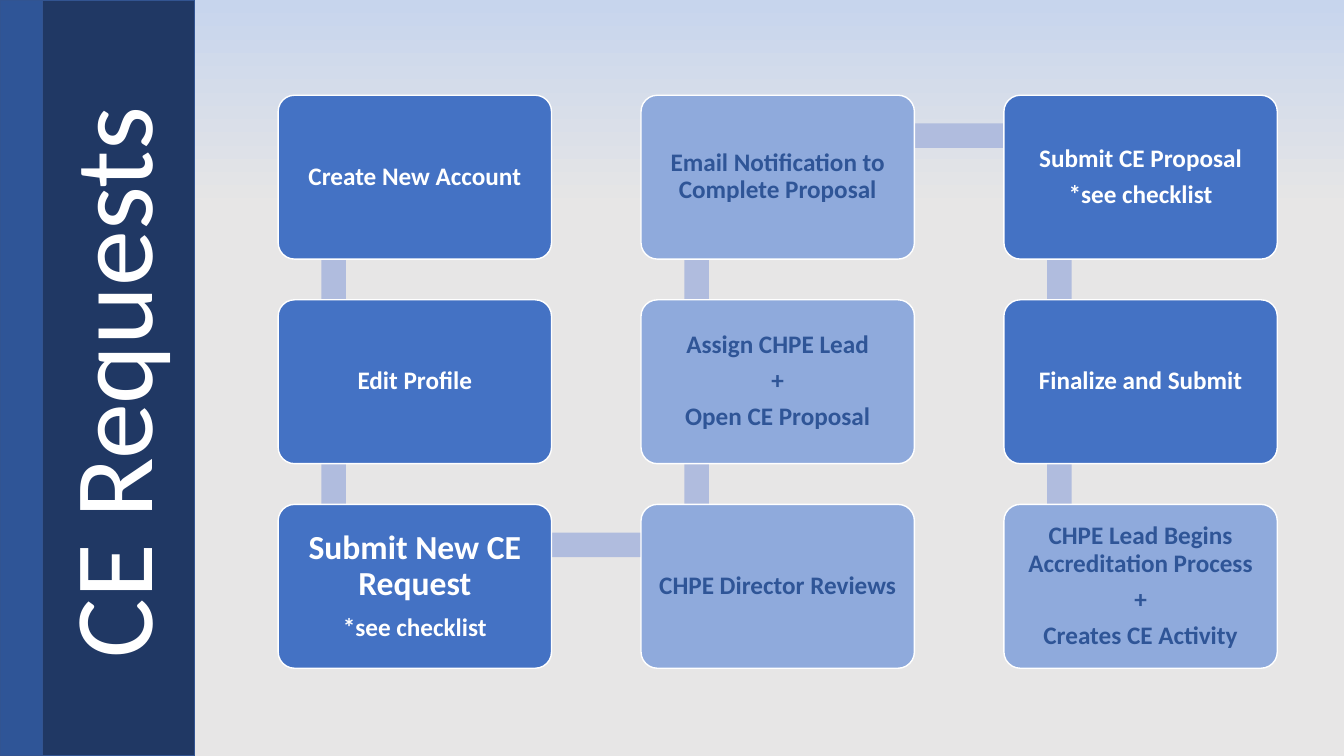
from dataclasses import dataclass

from pptx import Presentation
from pptx.dml.color import RGBColor
from pptx.enum.shapes import MSO_SHAPE
from pptx.enum.text import MSO_ANCHOR, MSO_AUTO_SIZE, PP_ALIGN
from pptx.util import Cm, Pt

RECT = MSO_SHAPE.RECTANGLE
ROUNDED = MSO_SHAPE.ROUNDED_RECTANGLE
MIDDLE, BOTTOM = MSO_ANCHOR.MIDDLE, MSO_ANCHOR.BOTTOM
CENTER = PP_ALIGN.CENTER
NO_AUTOFIT = MSO_AUTO_SIZE.NONE
TITLE_ONLY = 5


@dataclass(frozen=True)
class Theme:
    font: str = "Calibri"
    title_size: int = 80
    lead_size: int = 24
    step_size: int = 18
    white: str = "FFFFFF"
    sky: str = "C7D5ED"
    ground: str = "E7E6E6"
    navy: str = "203864"
    stripe: str = "2F5597"
    band_edge: str = "325491"
    requester: str = "4472C4"
    office: str = "8FAADC"
    office_text: str = "2F5597"
    link: str = "B0BCDE"


THEME = Theme()
SLIDE_W, SLIDE_H = 33.87, 19.05
STEP_W, STEP_H = 6.89, 4.13
HUB_X, HUB_Y = 1.4, 1.02  # point inside each step where its links meet
LINK_WIDTH = 0.62

# Steps in order: column, row, done by the requester, lines of text
STEPS = [
    (0, 0, True, ["Create New Account"]),
    (0, 1, True, ["Edit Profile"]),
    (0, 2, True, ["Submit New CE Request", "*see checklist"]),
    (1, 2, False, ["CHPE Director Reviews"]),
    (1, 1, False, ["Assign CHPE Lead", "+", "Open CE Proposal"]),
    (1, 0, False, ["Email Notification to Complete Proposal"]),
    (2, 0, True, ["Submit CE Proposal", "*see checklist"]),
    (2, 1, True, ["Finalize and Submit"]),
    (2, 2, False, ["CHPE Lead Begins Accreditation Process", "+",
                   "Creates CE Activity"]),
]
LEAD_LINE = "Submit New CE Request"


def rgb(value):
    return RGBColor.from_string(value)


def write_text(frame, lines, color, sizes, bold=False, anchor=MIDDLE,
               margin=None, gap=0.35):
    """Fill a frame with centred lines; gap is a share of the type size."""
    frame.word_wrap = True
    frame.auto_size = NO_AUTOFIT
    frame.vertical_anchor = anchor
    if margin is not None:
        frame.margin_left = frame.margin_right = Cm(margin)
        frame.margin_top = frame.margin_bottom = Cm(margin)
    for index, (line, size) in enumerate(zip(lines, sizes)):
        paragraph = frame.add_paragraph() if index else frame.paragraphs[0]
        paragraph.alignment = CENTER
        paragraph.line_spacing = 0.9
        paragraph.space_before = Pt(0)
        is_last = index == len(lines) - 1
        paragraph.space_after = Pt(0 if is_last else gap * size)
        run = paragraph.add_run()
        run.text = line
        run.font.name = THEME.font
        run.font.size = Pt(size)
        run.font.bold = bold
        run.font.color.rgb = rgb(color)


def add_block(slide, kind, left, top, width, height, fill, edge=None):
    block = slide.shapes.add_shape(kind, Cm(left), Cm(top), Cm(width), Cm(height))
    block.shadow.inherit = False
    block.fill.solid()
    block.fill.fore_color.rgb = rgb(fill)
    if edge:
        block.line.color.rgb = rgb(edge)
        block.line.width = Pt(1)
    else:
        block.line.fill.background()
    return block


def paint_background(slide):
    fill = slide.background.fill
    fill.gradient()
    fill.gradient_angle = 270
    sky, ground = fill.gradient_stops
    sky.position, sky.color.rgb = 0, rgb(THEME.sky)
    ground.position, ground.color.rgb = 0.28, rgb(THEME.ground)


def add_title_band(slide, left, top, width, height):
    """Dark side band with a lighter stripe and the title reading upwards."""
    stripe_w = 1.07
    add_block(slide, RECT, left + stripe_w, top, width - stripe_w, height,
              THEME.navy, THEME.band_edge)
    title = slide.shapes.title
    title_w, title_h = 18.01, 4.55
    center_x, center_y = left + 2.3, top + 9.64
    title.left, title.top = Cm(center_x - title_w / 2), Cm(center_y - title_h / 2)
    title.width, title.height = Cm(title_w), Cm(title_h)
    title.rotation = 270
    write_text(title.text_frame, ["CE Requests"], THEME.white,
               [THEME.title_size], anchor=BOTTOM)
    slide.shapes._spTree.append(title._element)  # bring in front of the band
    add_block(slide, RECT, left, top, stripe_w, height,
              THEME.stripe, THEME.band_edge)


def add_link(slide, start, end):
    """Straight bar between the hubs of two neighbouring steps."""
    (x1, y1), (x2, y2) = start, end
    left, top = min(x1, x2) + HUB_X, min(y1, y2) + HUB_Y
    length = abs(x2 - x1) + abs(y2 - y1)
    if x1 == x2:
        box = (left - LINK_WIDTH / 2, top, LINK_WIDTH, length)
    else:
        box = (left, top - LINK_WIDTH / 2, length, LINK_WIDTH)
    add_block(slide, RECT, *box, THEME.link)


def add_step(slide, left, top, by_requester, lines):
    fill = THEME.requester if by_requester else THEME.office
    color = THEME.white if by_requester else THEME.office_text
    step = add_block(slide, ROUNDED, left, top, STEP_W, STEP_H, fill, THEME.white)
    step.adjustments[0] = 0.1
    sizes = [THEME.lead_size if line == LEAD_LINE else THEME.step_size
             for line in lines]
    write_text(step.text_frame, lines, color, sizes, bold=True, margin=0.3)


def add_process(slide, left, top, width, height):
    """Snake of steps: down, up and down again over three columns."""
    pitch_x, pitch_y = (width - STEP_W) / 2, (height - STEP_H) / 2
    places = [(left + column * pitch_x, top + row * pitch_y)
              for column, row, *_ in STEPS]
    for start, end in zip(places, places[1:]):
        add_link(slide, start, end)
    for place, (*_, by_requester, lines) in zip(places, STEPS):
        add_step(slide, *place, by_requester, lines)


def main():
    deck = Presentation()
    deck.slide_width, deck.slide_height = Cm(SLIDE_W), Cm(SLIDE_H)
    slide = deck.slides.add_slide(deck.slide_layouts[TITLE_ONLY])
    paint_background(slide)
    add_process(slide, 7.01, 2.4, 25.18, 14.44)
    add_title_band(slide, 0, 0, 4.91, SLIDE_H)
    deck.save("out.pptx")


if __name__ == "__main__":
    main()
